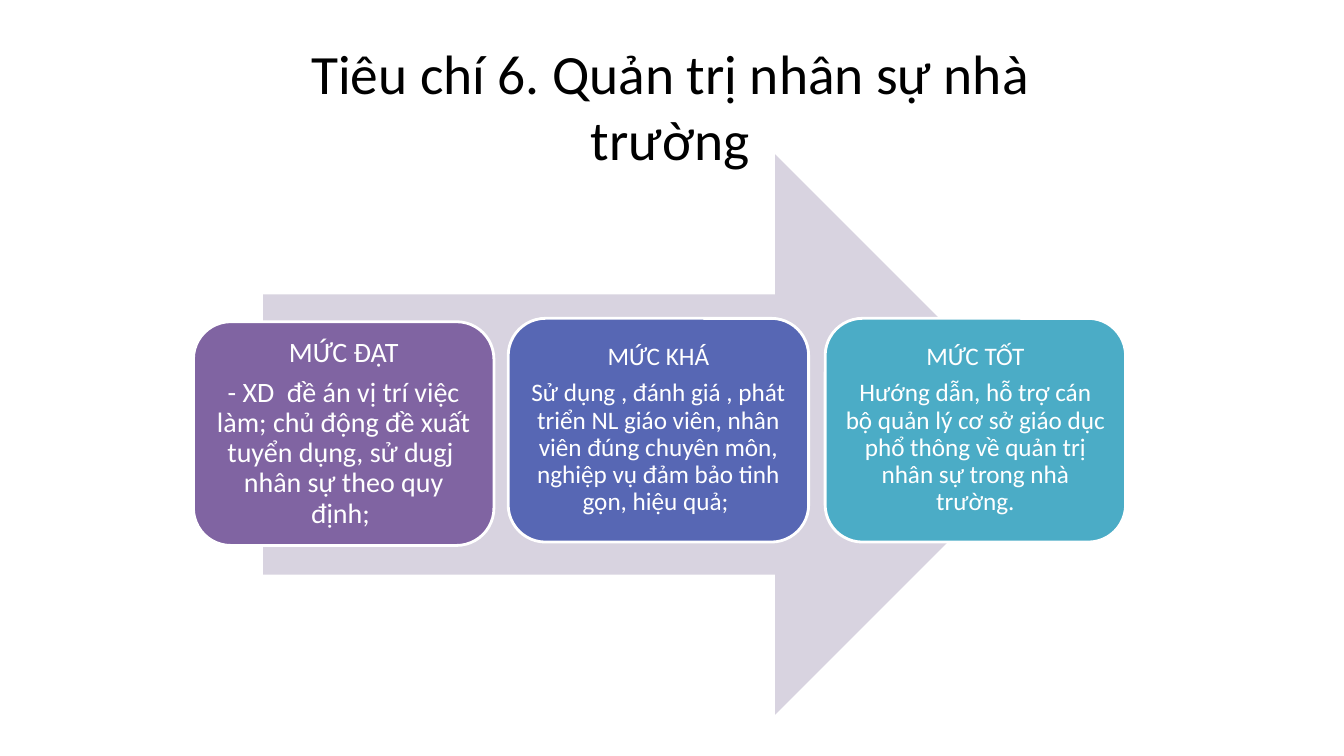
from pptx import Presentation
from pptx.dml.color import RGBColor
from pptx.enum import shapes, text
from pptx.util import Pt

# Content
TITLE = "Tiêu chí 6. Quản trị nhân sự nhà trường"
LEVELS = [  # heading, description, fill, left, top, text size, inset
    ("MỨC ĐẠT",
     "- XD  đề án vị trí việc làm; chủ động đề xuất tuyển dụng, "
     "sử dugj  nhân sự theo quy định; ",
     "8064A2", 138.2, 229.8, 20, 6),
    ("MỨC KHÁ",
     "Sử dụng , đánh giá , phát triển NL giáo viên, nhân viên đúng "
     "chuyên môn, nghiệp vụ đảm bảo tinh gọn, hiệu quả; ",
     "5767B4", 363, 227.4, 18, 5.4),
    ("MỨC TỐT",
     "Hướng dẫn, hỗ trợ cán bộ quản lý cơ sở giáo dục phổ thông "
     "về quản trị nhân sự trong nhà trường.",
     "4BACC6", 589.4, 227.4, 18, 5.4),
]
TITLE_BOX = (154.8, 30.2, 648, 90)
ARROW_BOX = (187.9, 110.2, 565.9, 400.3)
CARD_W, CARD_H = 214.6, 159.8
SPACE_AFTER = 0.35  # share of the text size


def color(hex_code):
    return RGBColor.from_string(hex_code)


def add_block(s, kind, box, fill, line=None):
    sp = s.shapes.add_shape(kind, *map(Pt, box))
    sp.shadow.inherit = False
    sp.fill.solid()
    sp.fill.fore_color.rgb = color(fill)
    if line:
        sp.line.color.rgb = color(line)
        sp.line.width = Pt(2)
    else:
        sp.line.fill.background()
    return sp


def write(sp, lines, size, hex_code, inset=None, **para):
    tf = sp.text_frame
    frame = {"word_wrap": True, "vertical_anchor": text.MSO_ANCHOR.MIDDLE}
    if inset is not None:
        for side in ("left", "right", "top", "bottom"):
            frame["margin_" + side] = Pt(inset)
    for name, value in frame.items():
        setattr(tf, name, value)
    for i, line in enumerate(lines):
        p = tf.paragraphs[0] if i == 0 else tf.add_paragraph()
        for name, value in {"alignment": text.PP_ALIGN.CENTER, **para}.items():
            setattr(p, name, value)
        r = p.add_run()
        r.text = line
        for name, value in {"name": "Calibri", "size": Pt(size)}.items():
            setattr(r.font, name, value)
        r.font.color.rgb = color(hex_code)


def main():
    prs = Presentation()
    prs.slide_width, prs.slide_height = Pt(960), Pt(540)
    s = prs.slides.add_slide(prs.slide_layouts[6])

    # Title
    write(s.shapes.add_textbox(*map(Pt, TITLE_BOX)), [TITLE], 39.6, "000000")

    # Arrow behind the levels
    add_block(s, shapes.MSO_SHAPE.RIGHT_ARROW, ARROW_BOX, "D8D3E0")

    # Level cards
    for heading, body, fill, left, top, size, inset in LEVELS:
        card = add_block(s, shapes.MSO_SHAPE.ROUNDED_RECTANGLE,
                         (left, top, CARD_W, CARD_H), fill, "FFFFFF")
        write(card, [heading, body], size, "FFFFFF", inset,
              line_spacing=0.9, space_after=Pt(size * SPACE_AFTER))

    prs.save("out.pptx")


if __name__ == "__main__":
    main()
